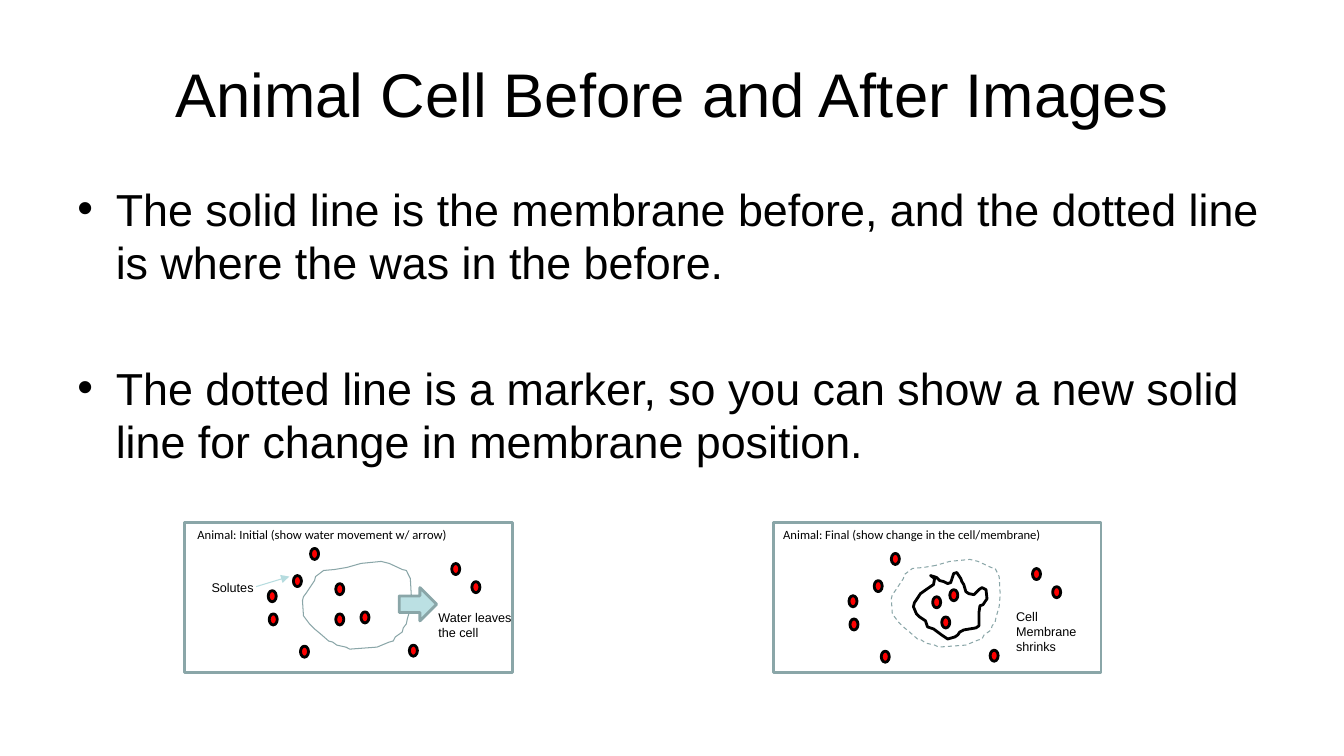
from lxml import etree
from pptx import Presentation
from pptx.dml.color import RGBColor
from pptx.enum.dml import MSO_LINE
from pptx.enum.shapes import MSO_CONNECTOR, MSO_SHAPE
from pptx.enum.text import MSO_ANCHOR, PP_ALIGN
from pptx.oxml.ns import qn
from pptx.util import Inches, Pt

RECTANGLE = MSO_SHAPE.RECTANGLE
OVAL = MSO_SHAPE.OVAL
RIGHT_ARROW = MSO_SHAPE.RIGHT_ARROW
STRAIGHT = MSO_CONNECTOR.STRAIGHT
DASH = MSO_LINE.DASH
MIDDLE = MSO_ANCHOR.MIDDLE
CENTER = PP_ALIGN.CENTER

BLACK = RGBColor(0x00, 0x00, 0x00)
WHITE = RGBColor(0xFF, 0xFF, 0xFF)
RED = RGBColor(0xFF, 0x00, 0x00)
TEAL = RGBColor(0x8A, 0xA6, 0xA8)
PALE_TEAL = RGBColor(0xBB, 0xE0, 0xE3)
POINTER_TEAL = RGBColor(0xB6, 0xDC, 0xDF)

PANEL_SIZE = (3.25, 1.49)
OUTSIDE_SOLUTES = [(1.25, 0.26), (0.83, 0.68), (1.08, 0.53), (2.65, 0.41),
                   (2.85, 0.59), (0.84, 0.91), (2.23, 1.22), (1.15, 1.23)]
INITIAL_INSIDE = [(1.5, 0.61), (1.5, 0.91), (1.75, 0.89)]
FINAL_INSIDE = [(1.58, 0.74), (1.75, 0.67), (1.67, 0.94)]
FINAL_SHIFT = (-0.08, 0.05)

MEMBRANE = [(44, 6), (32, 8), (21, 9), (13, 15), (12, 19), (4, 31), (1, 35), (0, 39),
            (1, 54), (7, 62), (12, 67), (18, 72), (26, 79), (30, 80), (34, 83),
            (43, 85), (47, 87), (74, 85), (86, 80), (90, 79), (92, 75), (99, 70),
            (100, 66), (103, 62), (104, 57), (107, 47), (108, 35), (107, 17),
            (103, 9), (99, 8), (86, 2), (82, 1), (78, 0), (58, 2)]
SHRUNK_MEMBRANE = [(21, 6), (20, 12), (14, 16), (7, 21), (3, 27), (1, 30), (0, 34),
                   (3, 41), (6, 44), (12, 48), (14, 54), (20, 56), (28, 62), (34, 66),
                   (41, 64), (44, 62), (46, 59), (50, 57), (62, 55), (65, 53), (65, 40),
                   (66, 33), (69, 32), (73, 26), (72, 17), (68, 15), (65, 17), (60, 22),
                   (55, 21), (52, 19), (50, 12), (48, 9), (47, 6), (43, 0), (40, 1),
                   (38, 7), (37, 10), (34, 11), (30, 9), (26, 8), (23, 5), (17, 3)]


def add_text(page, box, lines, size, font="Arial"):
    frame = page.shapes.add_textbox(*map(Inches, box)).text_frame
    frame.word_wrap = True
    for index, line in enumerate(lines):
        para = frame.add_paragraph() if index else frame.paragraphs[0]
        para.text = line
        para.font.size = Pt(size)
        para.font.name = font
        para.font.color.rgb = BLACK
    return frame


def add_shape(page, kind, box, fill, line):
    shape = page.shapes.add_shape(kind, *map(Inches, box))
    shape.shadow.inherit = False
    shape.fill.solid()
    shape.fill.fore_color.rgb = fill
    shape.line.color.rgb = line
    shape.line.width = Pt(2)


def add_outline(page, left, top, points, color, width):
    start, *rest = points
    builder = page.shapes.build_freeform(*start, scale=Inches(0.01))
    builder.add_line_segments(rest, close=True)
    outline = builder.convert_to_shape(Inches(left), Inches(top))
    outline.shadow.inherit = False
    outline.fill.background()
    outline.line.color.rgb = color
    outline.line.width = Pt(width)
    return outline


def add_solutes(page, left, top, spots):
    for x, y in spots:
        add_shape(page, OVAL, (left + x, top + y, 0.08, 0.11), RED, BLACK)


def add_pointer(page, start, end):
    pointer = page.shapes.add_connector(STRAIGHT, *map(Inches, start + end))
    pointer.line.color.rgb = POINTER_TEAL
    pointer.line.width = Pt(0.75)
    etree.SubElement(pointer.line._get_or_add_ln(), qn("a:tailEnd"), type="triangle")
    etree.SubElement(pointer._element.spPr, qn("a:effectLst"))


def add_title(page, box):
    frame = add_text(page, box, ["Animal Cell Before and After Images"], 44)
    frame.vertical_anchor = MIDDLE
    frame.paragraphs[0].alignment = CENTER


def add_bullets(page, box):
    frame = add_text(page, box, [
        "The solid line is the membrane before, and the dotted line is where the was in the before.",
        "The dotted line is a marker, so you can show a new solid line for change in membrane position.",
    ], 32)
    for para, gap in zip(frame.paragraphs, (6.4, 51)):
        para.space_before = Pt(gap)
        props = para._p.get_or_add_pPr()
        props.set("marL", str(Inches(0.38)))
        props.set("indent", str(Inches(-0.38)))
        etree.SubElement(props, qn("a:buFont"), typeface="Arial")
        etree.SubElement(props, qn("a:buChar"), char="•")
        props.append(props.find(qn("a:defRPr")))


def add_panel(page, left, top, heading, heading_offset):
    add_shape(page, RECTANGLE, (left, top, *PANEL_SIZE), WHITE, TEAL)
    add_text(page, (left + heading_offset, top, 3.13, 0.3), [heading], 9, "Calibri")


def add_initial_panel(page, left, top):
    add_panel(page, left, top, "Animal: Initial (show water movement w/ arrow)", 0.03)
    add_outline(page, left + 1.17, top + 0.39, MEMBRANE, TEAL, 0.75)
    add_shape(page, RIGHT_ARROW, (left + 2.13, top + 0.65, 0.37, 0.33), PALE_TEAL, TEAL)
    add_text(page, (left + 2.42, top + 0.82, 1, 0.4), ["Water leaves the cell"], 9)
    add_solutes(page, left, top, OUTSIDE_SOLUTES + INITIAL_INSIDE)
    add_text(page, (left + 0.17, top + 0.52, 0.66, 0.19), ["Solutes"], 9)
    add_pointer(page, (left + 0.71, top + 0.64), (left + 1.04, top + 0.54))


def add_final_panel(page, left, top):
    add_panel(page, left, top, "Animal: Final (show change in the cell/membrane)", 0)
    add_outline(page, left + 1.17, top + 0.37, MEMBRANE, TEAL, 0.75).line.dash_style = DASH
    add_outline(page, left + 1.39, top + 0.5, SHRUNK_MEMBRANE, BLACK, 2)
    add_text(page, (left + 2.31, top + 0.81, 0.83, 0.56), ["Cell Membrane shrinks"], 9)
    shift_x, shift_y = FINAL_SHIFT
    add_solutes(page, left + shift_x, top + shift_y, OUTSIDE_SOLUTES)
    add_solutes(page, left, top, FINAL_INSIDE)


def main():
    deck = Presentation()
    deck.slide_width = Inches(13.33)
    deck.slide_height = Inches(7.5)
    page = deck.slides.add_slide(deck.slide_layouts[6])
    add_title(page, (0.67, 0.3, 12, 1.25))
    add_bullets(page, (0.67, 1.75, 12, 4.95))
    add_initial_panel(page, 1.83, 5.18)
    add_final_panel(page, 7.67, 5.18)
    deck.save("out.pptx")


if __name__ == "__main__":
    main()
